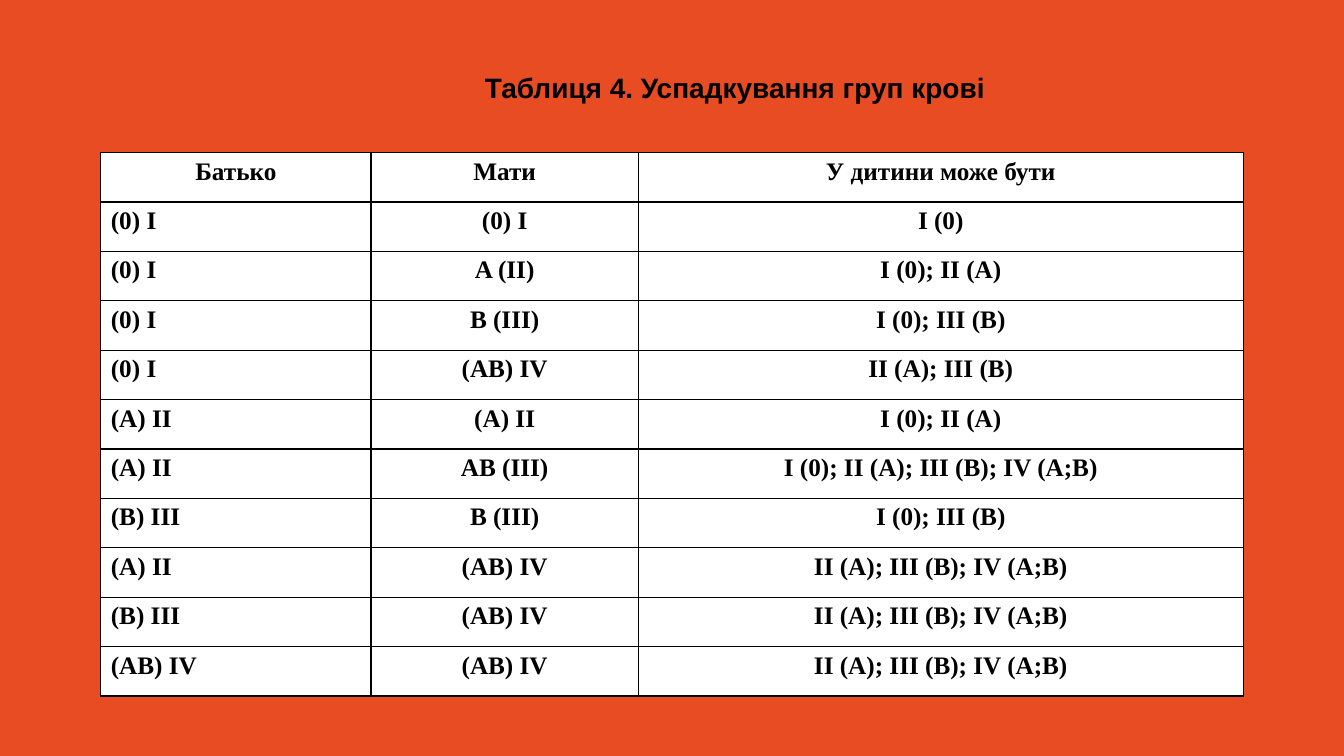
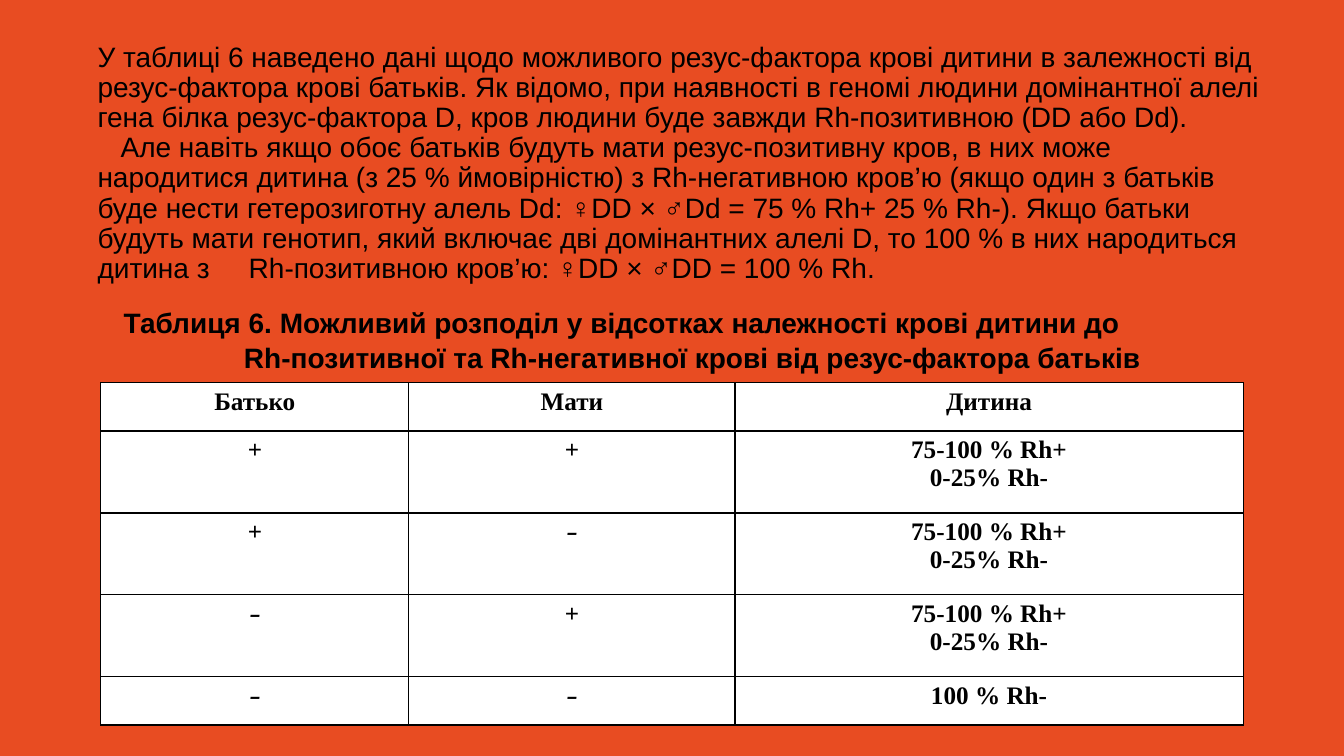
from dataclasses import dataclass
from lxml.etree import SubElement
from pptx import Presentation
from pptx.dml.color import RGBColor
from pptx.enum.text import MSO_ANCHOR, PP_ALIGN
from pptx.oxml.ns import qn
from pptx.util import Pt


@dataclass(frozen=True)
class Theme:
    background = RGBColor.from_string("E84C22")
    ink = RGBColor.from_string("000000")
    cell = RGBColor.from_string("FFFFFF")
    body_font = "Arial"
    table_font = "Times New Roman"
    dash_font = "Calibri"
    body_size = Pt(20)
    table_size = Pt(18)
    border = Pt(1)
    table_left = Pt(72)


theme = Theme()


def add_text(page, left, top, width, height, lines, bold=False, align=PP_ALIGN.LEFT):
    box = page.shapes.add_textbox(Pt(left), Pt(top), Pt(width), Pt(height))
    frame = box.text_frame
    frame.word_wrap = True
    frame.text = "\n".join(lines)
    for para in frame.paragraphs:
        para.alignment = align
        para.font.name = theme.body_font
        para.font.size = theme.body_size
        para.font.bold = bold
        para.font.color.rgb = theme.ink
    return frame


def add_grid(page, top, widths, heights, rows):
    """Add a bordered white table with bold centred text."""
    table = page.shapes.add_table(
        len(rows), len(widths), theme.table_left, Pt(top), Pt(sum(widths)), Pt(sum(heights))
    ).table
    table.first_row = table.horz_banding = False
    for column, width in zip(table.columns, widths):
        column.width = Pt(width)
    for row, height, texts in zip(table.rows, heights, rows):
        row.height = Pt(height)
        for cell, text in zip(row.cells, texts):
            cell.text = text
            for para in cell.text_frame.paragraphs:
                para.alignment = PP_ALIGN.CENTER
                para.font.name = theme.dash_font if text == "–" else theme.table_font
                para.font.size = theme.table_size
                para.font.bold = True
                para.font.italic = text in ("+", "–")
                para.font.color.rgb = theme.ink
            properties = cell._tc.get_or_add_tcPr()
            for side in ("a:lnL", "a:lnR", "a:lnT", "a:lnB"):
                line = SubElement(properties, qn(side), w=str(theme.border))
                fill = SubElement(line, qn("a:solidFill"))
                SubElement(fill, qn("a:srgbClr"), val=str(theme.ink))
            cell.fill.solid()
            cell.fill.fore_color.rgb = theme.cell
    return table


deck = Presentation()
deck.slide_width, deck.slide_height = Pt(960), Pt(540)
pages = [deck.slides.add_slide(deck.slide_layouts[6]) for _ in range(2)]
for page in pages:
    page.background.fill.solid()
    page.background.fill.fore_color.rgb = theme.background
blood_page, rhesus_page = pages

# Inheritance of blood groups
add_text(blood_page, 289, 47, 472, 31, ["Таблиця 4. Успадкування груп крові"],
         bold=True, align=PP_ALIGN.CENTER)
blood_rows = [
    ("Батько", "Мати", "У дитини може бути"),
    ("(0) I", "(0) I", "I (0)"),
    ("(0) I", "A (II)", "I (0); II (A)"),
    ("(0) I", "B (III)", "I (0); III (B)"),
    ("(0) I", "(AB) IV", "II (A); III (B)"),
    ("(A) II", "(A) II", "I (0); II (A)"),
    ("(A) II", "AB (III)", "I (0); II (A); III (B); IV (A;B)"),
    ("(B) III", "B (III)", "I (0); III (B)"),
    ("(A) II", "(AB) IV", "II (A); III (B); IV (A;B)"),
    ("(B) III", "(AB) IV", "II (A); III (B); IV (A;B)"),
    ("(AB) IV", "(AB) IV", "II (A); III (B); IV (A;B)"),
]
blood_table = add_grid(blood_page, 109, (193, 191, 432), [35.3] * len(blood_rows), blood_rows)
for row_index in range(1, len(blood_rows)):
    blood_table.cell(row_index, 0).text_frame.paragraphs[0].alignment = PP_ALIGN.LEFT

# Rhesus factor
intro = add_text(rhesus_page, 62.6, 46.8, 846.7, 162, [
    "У таблиці 6 наведено дані щодо можливого резус-фактора крові дитини в залежності від "
    "резус-фактора крові батьків. Як відомо, при наявності в геномі людини домінантної алелі "
    "гена білка резус-фактора D, кров людини буде завжди Rh-позитивною (DD або Dd).",
    "Але навіть якщо обоє батьків будуть мати резус-позитивну кров, в них може народитися "
    "дитина (з 25 % ймовірністю) з Rh-негативною кров’ю (якщо один з батьків буде нести "
    "гетерозиготну алель Dd: ♀DD × ♂Dd = 75 % Rh+ 25 % Rh-). Якщо батьки будуть мати генотип, "
    "який включає дві домінантних алелі D, то 100 % в них народиться дитина з\t"
    "Rh-позитивною кров’ю: ♀DD × ♂DD = 100 % Rh.",
])
intro.vertical_anchor = MSO_ANCHOR.MIDDLE
intro.margin_bottom = Pt(25.2)
for para in intro.paragraphs:
    para.line_spacing = 0.9
second = intro.paragraphs[1]._p.get_or_add_pPr()
second.set("indent", str(Pt(16.5)))
tabs = second.makeelement(qn("a:tabLst"))
SubElement(tabs, qn("a:tab"), pos=str(Pt(169)), algn="l")
second.find(qn("a:defRPr")).addprevious(tabs)

caption = add_text(rhesus_page, 79.2, 215, 813.6, 55.4, [
    "Таблиця 6. Можливий розподіл у відсотках належності крові дитини до",
    "Rh-позитивної та Rh-негативної крові від резус-фактора батьків",
], bold=True)
for para, indent in zip(caption.paragraphs, (2, 88)):
    para._p.get_or_add_pPr().set("marL", str(Pt(indent)))
caption.paragraphs[1].space_before = Pt(1)

mixed = "75-100 % Rh+\n0-25% Rh-"
rhesus_rows = [
    ("Батько", "Мати", "Дитина"),
    ("+", "+", mixed),
    ("+", "–", mixed),
    ("–", "+", mixed),
    ("–", "–", "100 % Rh-"),
]
add_grid(rhesus_page, 273.4, (220, 233, 363), (34.5, 58.5, 58.5, 58.5, 34.5), rhesus_rows)

deck.save("out.pptx")
